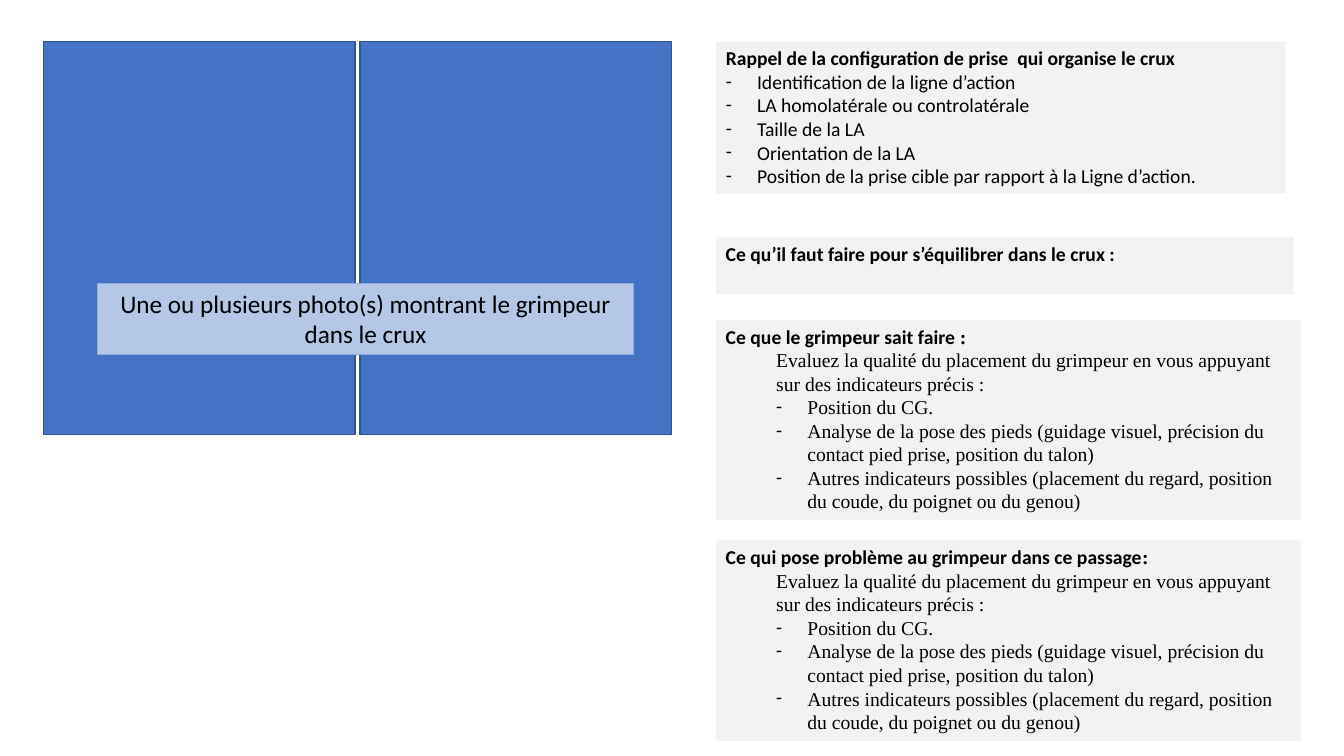
import pptx
import pptx.dml.color
import pptx.enum.shapes
import pptx.enum.text
import pptx.oxml
import pptx.oxml.ns
import pptx.util

Inches = pptx.util.Inches
SANS = "Calibri"
SERIF = "Times New Roman"
HANGING = 0.31

# Panel texts
CRUX_POINTS = [
    "Identification de la ligne d’action",
    "LA homolatérale ou controlatérale",
    "Taille de la LA",
    "Orientation de la LA",
    "Position de la prise cible par rapport à la Ligne d’action.",
]
PLACEMENT_INTRO = ("Evaluez la qualité du placement du grimpeur en vous "
                   "appuyant sur des indicateurs précis :")
PLACEMENT_POINTS = [
    "Position du CG.",
    "Analyse de la pose des pieds (guidage visuel, précision du contact "
    "pied prise, position du talon)",
    "Autres indicateurs possibles (placement du regard, position du coude, "
    "du poignet ou du genou)",
]


def colour(value):
    return pptx.dml.color.RGBColor.from_string(value)


def add_box(page, left, top, width, height, fill, line=None, line_width=1):
    box = page.shapes.add_shape(
        pptx.enum.shapes.MSO_SHAPE.RECTANGLE,
        Inches(left), Inches(top), Inches(width), Inches(height))
    box.shadow.inherit = False
    box.fill.solid()
    box.fill.fore_color.rgb = colour(fill)
    if line:
        box.line.color.rgb = colour(line)
        box.line.width = pptx.util.Pt(line_width)
    else:
        box.line.fill.background()
    box.text_frame.word_wrap = True
    box.text_frame.vertical_anchor = pptx.enum.text.MSO_ANCHOR.TOP
    return box


def add_span(para, text, size, font=SANS, bold=False):
    span = para.add_run()
    span.text = text
    span.font.name = font
    span.font.size = pptx.util.Pt(size)
    span.font.bold = bold
    span.font.color.rgb = colour("000000")


def indent(para, margin, first_line=0.0):
    properties = para._p.get_or_add_pPr()
    properties.set("marL", str(Inches(margin)))
    properties.set("indent", str(Inches(first_line)))


def add_bullet(frame, text, font, margin):
    para = frame.add_paragraph()
    para.alignment = pptx.enum.text.PP_ALIGN.LEFT
    indent(para, margin + HANGING, -HANGING)
    properties = para._p.get_or_add_pPr()
    for tag, name, value in (("a:buFont", "typeface", SANS),
                             ("a:buChar", "char", "-")):
        element = pptx.oxml.parse_xml(
            f'<{tag} {pptx.oxml.ns.nsdecls("a")} {name}="{value}"/>')
        properties.append(element)
    add_span(para, text, 14, font)


def photo_area(page, left, top, width, height):
    # Two photo frames side by side
    gap = 0.05
    frame_width = (width - gap) / 2
    for column in range(2):
        add_box(page, left + column * (frame_width + gap), top,
                frame_width, height, "4472C4", "325491")
    # Caption across both frames
    caption = add_box(page, left + 0.54, top + 2.4, 5.31, 0.71,
                      "B4C7E7", "8FAADC", 0.75)
    para = caption.text_frame.paragraphs[0]
    para.alignment = pptx.enum.text.PP_ALIGN.CENTER
    add_span(para, "Une ou plusieurs photo(s) montrant le grimpeur dans le crux",
             18)


def text_panel(page, left, top, width, height, heading, points=(),
               intro=None, colon=""):
    frame = add_box(page, left, top, width, height, "F2F2F2").text_frame
    # Heading
    para = frame.paragraphs[0]
    para.alignment = pptx.enum.text.PP_ALIGN.LEFT
    add_span(para, heading, 14, bold=True)
    if colon:
        add_span(para, colon, 14, SERIF, True)
    # Introduction and points
    font, margin = SANS, 0
    if intro:
        font, margin = SERIF, 0.5
        para = frame.add_paragraph()
        para.alignment = pptx.enum.text.PP_ALIGN.LEFT
        indent(para, margin)
        add_span(para, intro, 14, font)
    for point in points:
        add_bullet(frame, point, font, margin)


def analysis_column(page, left, top):
    text_panel(page, left, top, 5.65, 1.51,
               "Rappel de la configuration de prise  qui organise le crux",
               CRUX_POINTS)
    text_panel(page, left, top + 1.94, 5.73, 0.57,
               "Ce qu’il faut faire pour s’équilibrer dans le crux :")
    for offset, heading in (
            (2.76, "Ce que le grimpeur sait faire "),
            (4.95, "Ce qui pose problème au grimpeur dans ce passage")):
        text_panel(page, left, top + offset, 5.8, 1.99, heading,
                   PLACEMENT_POINTS, PLACEMENT_INTRO, ":")


def main():
    deck = pptx.Presentation()
    deck.slide_width = Inches(13.33)
    deck.slide_height = Inches(7.5)
    page = deck.slides.add_slide(deck.slide_layouts[6])
    photo_area(page, 0.43, 0.41, 6.23, 3.9)
    analysis_column(page, 7.1, 0.41)
    deck.save("out.pptx")


if __name__ == "__main__":
    main()
